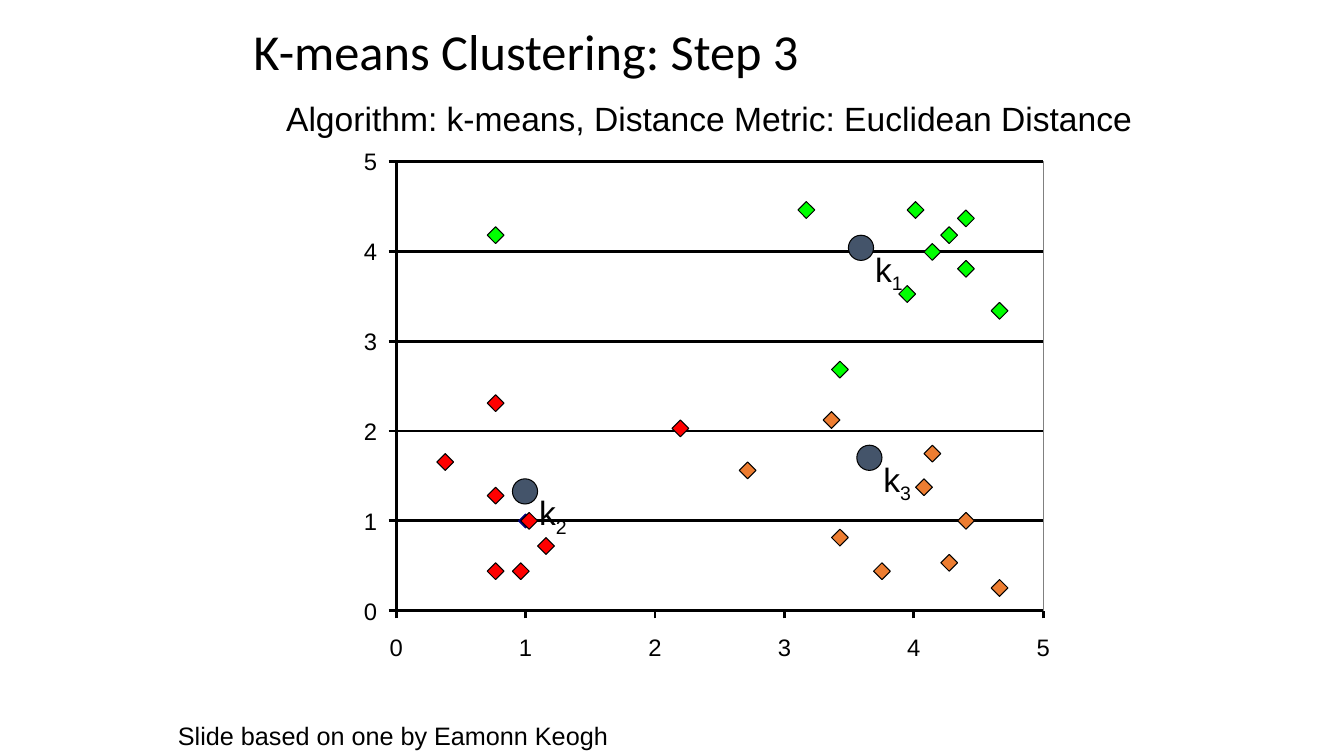
"""Build the slide that shows step 3 of k-means clustering on a scatter plot."""
from lxml.etree import SubElement
from pptx import Presentation
from pptx.dml.color import RGBColor
from pptx.enum.shapes import MSO_CONNECTOR, MSO_SHAPE
from pptx.enum.text import MSO_ANCHOR, PP_ALIGN
from pptx.oxml.ns import qn
from pptx.util import Pt

COLORS = {
    "ink": "000000", "paper": "FFFFFF", "frame": "808080", "centroid": "44546A",
    "start": "000080", "green": "00FF00", "red": "FF0000", "orange": "ED7D31",
}

deck = Presentation()
deck.slide_width, deck.slide_height = 12192000, 6858000
slide = deck.slides.add_slide(deck.slide_layouts[6])
unit = deck.slide_width / 160


def add_mark(shapes, kind, col, row, width, height, fill, edge="ink", weight=0.75):
    mark = shapes.add_shape(kind, *(round(n * unit) for n in (col, row, width, height)))
    mark.shadow.inherit = False
    if fill:
        mark.fill.solid()
        mark.fill.fore_color.rgb = RGBColor.from_string(COLORS[fill])
    else:
        mark.fill.background()
    if edge:
        mark.line.color.rgb = RGBColor.from_string(COLORS[edge])
        mark.line.width = Pt(weight)
    else:
        mark.line.fill.background()


def add_text(shapes, col, row, width, height, text, size, subscript="", font="Arial", wrap=False):
    box = shapes.add_textbox(*(round(n * unit) for n in (col, row, width, height)))
    box.text_frame.word_wrap = wrap
    paragraph = box.text_frame.paragraphs[0]
    for part in filter(None, (text, subscript)):
        run = paragraph.add_run()
        run.text = part
        run.font.size = Pt(size)
        run.font.name = font
        run.font.color.rgb = RGBColor.from_string(COLORS["ink"])
    if subscript:
        run._r.get_or_add_rPr().set("baseline", "-25000")
    return box.text_frame


plot_left, plot_top, plot_width, plot_height = 47.16, 19.2, 77.04, 53.52
plot_right, plot_bottom = plot_left + plot_width, plot_top + plot_height
x_ticks = [plot_left + plot_width * value / 5 for value in range(6)]
y_ticks = [plot_bottom - plot_height * value / 5 for value in range(6)]
tick_length = 0.9

plot_area = plot_left, plot_top, plot_width, plot_height
add_mark(slide.shapes, MSO_SHAPE.RECTANGLE, *plot_area, "paper", None)
add_mark(slide.shapes, MSO_SHAPE.RECTANGLE, *plot_area, None, "frame", 0.63)

rules = [(plot_left, y, plot_right, y) for y in y_ticks]
rules += [(plot_left, plot_top, plot_left, plot_bottom)]
rules += [(plot_left - tick_length, y, plot_left, y) for y in y_ticks]
rules += [(x, plot_bottom + tick_length, x, plot_bottom) for x in x_ticks]
for ends in rules:
    rule = slide.shapes.add_connector(MSO_CONNECTOR.STRAIGHT, *(round(n * unit) for n in ends))
    rule.line.color.rgb = RGBColor.from_string(COLORS["ink"])
    rule.line.width = Pt(0)
    SubElement(rule._element.spPr, qn("a:effectLst"))

add_mark(slide.shapes, MSO_SHAPE.DIAMOND, x_ticks[1] - 0.84, y_ticks[1] - 0.84, 1.68, 1.68,
         "start", "start", 0.63)

digit_width, digit_height = 1.57, 3.48
digit_places = [(value, 43.32, y - digit_height / 2) for value, y in enumerate(y_ticks)]
digit_places += [(value, x - digit_width / 2, 75.36) for value, x in enumerate(x_ticks)]
for value, col, row in digit_places:
    digit = add_text(slide.shapes, col, row, digit_width, digit_height, str(value), 17)
    digit.margin_left = digit.margin_right = digit.margin_top = digit.margin_bottom = 0
    digit.paragraphs[0].alignment = PP_ALIGN.CENTER

title = add_text(slide.shapes, 29, 3, 102, 7, "K-means Clustering: Step 3", 36,
                 font="Calibri", wrap=True)
title.vertical_anchor = MSO_ANCHOR.MIDDLE
title.paragraphs[0].line_spacing = 0.9
add_text(slide.shapes, 32.88, 11.04, 104.16, 6,
         "Algorithm: k-means, Distance Metric: Euclidean Distance", 24)

centroids = {"1": (101, 28), "2": (61, 57), "3": (102, 53)}
for number, (col, row) in centroids.items():
    group = slide.shapes.add_group_shape()
    add_mark(group.shapes, MSO_SHAPE.OVAL, col, row, 3, 3, "centroid")
    add_text(group.shapes, col + 2, row + 1, 7, 6, "k", 24, subscript=number, wrap=True)

clusters = {
    "red": [(62, 61), (64, 64), (61, 67), (58, 58), (58, 47), (58, 67), (52, 54), (80, 50)],
    "green": [(58, 27), (108, 24), (114, 25), (112, 27), (110, 29), (114, 31), (118, 36),
              (95, 24), (99, 43), (107, 34)],
    "orange": [(99, 63), (104, 67), (109, 57), (98, 49), (88, 55), (114, 61), (112, 66),
               (110, 53), (118, 69)],
}
for color, points in clusters.items():
    for col, row in points:
        add_mark(slide.shapes, MSO_SHAPE.DIAMOND, col, row, 2, 2, color)

add_text(slide.shapes, 20, 85.2, 55.8, 4.8, "Slide based on one by Eamonn Keogh", 18)

deck.save("out.pptx")
